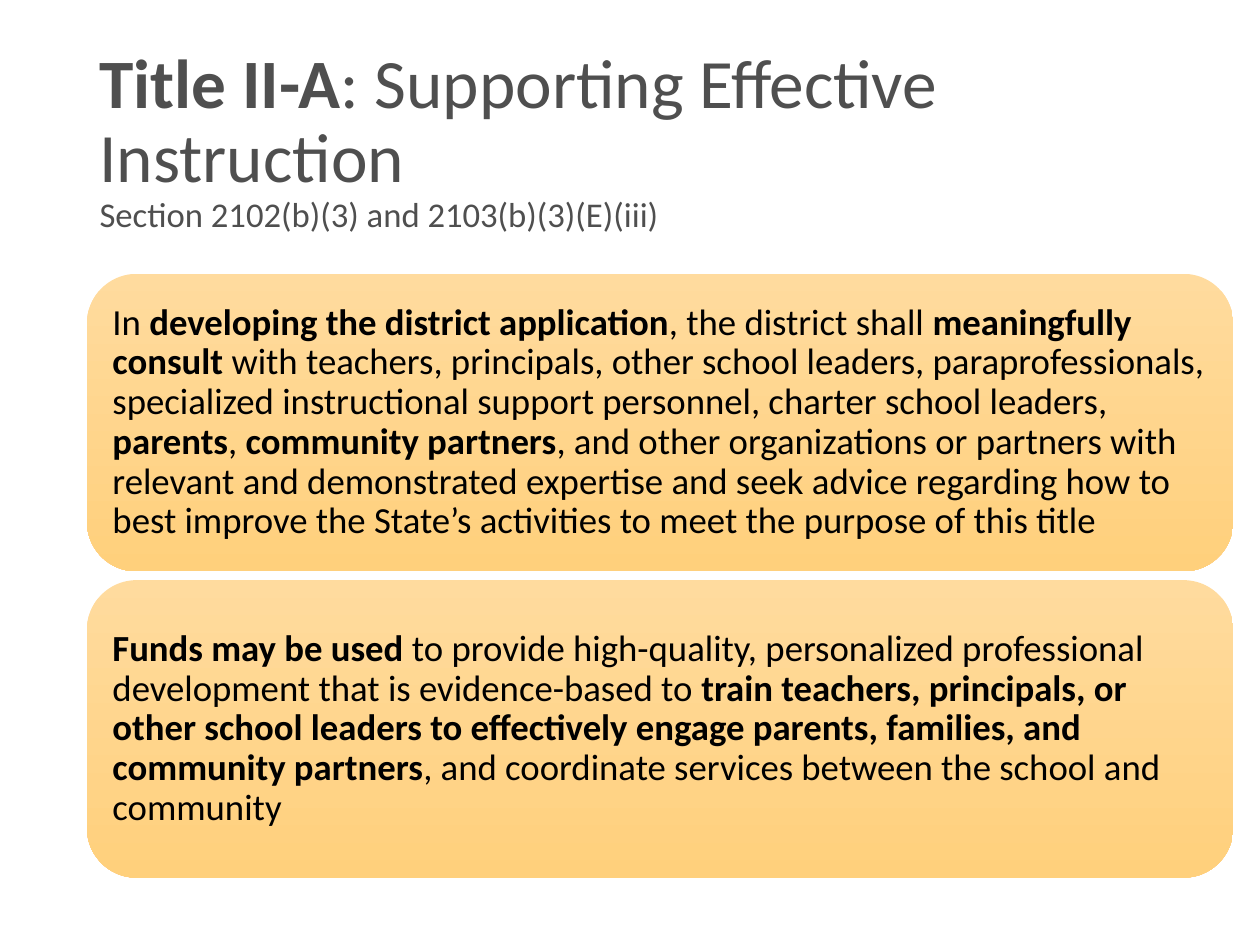
from pptx import Presentation
from pptx.dml.color import RGBColor
from pptx.enum.shapes import MSO_SHAPE as SHAPE
from pptx.enum.text import MSO_ANCHOR as ANCHOR, MSO_AUTO_SIZE as AUTO, PP_ALIGN as ALIGN
from pptx.util import Pt

FONT = "Calibri"
TITLE = [("Title II-A", True), (": Supporting Effective Instruction", False)]
SECTION = [("Section 2102(b)(3) and 2103(b)(3)(E)(iii)", False)]
CARDS = [
    [
        ("In ", False),
        ("developing the district application", True),
        (", the district shall ", False),
        ("meaningfully consult", True),
        (" with teachers, principals, other school leaders, paraprofessionals, "
         "specialized instructional support personnel, charter school leaders, ", False),
        ("parents", True),
        (", ", False),
        ("community partners", True),
        (", and other organizations or partners with relevant and demonstrated "
         "expertise and seek advice regarding how to best improve the State’s "
         "activities to meet the purpose of this title", False),
    ],
    [
        ("Funds may be used ", True),
        ("to provide high-quality, personalized professional development "
         "that is evidence-based to ", False),
        ("train teachers, principals, or other school leaders to effectively "
         "engage parents, families, and community partners", True),
        (", and coordinate services between the school and community", False),
    ],
]
GRADIENT = ["FFDB9E", "FFD07C"]
LEFT, CARD_TOP, CARD_W, CARD_H, CARD_GAP = 49.7, 156.5, 655, 170, 5


def rgb(value):
    return RGBColor.from_string(value)


def add_runs(p, runs, size, color):
    for text, bold in runs:
        r = p.add_run()
        r.text = text
        r.font.name = FONT
        r.font.size = Pt(size)
        r.font.bold = bold
        r.font.color.rgb = rgb(color)


def start_text(sp):
    tf = sp.text_frame
    tf.word_wrap = True
    tf.auto_size = AUTO.NONE
    tf.vertical_anchor = ANCHOR.MIDDLE
    p = tf.paragraphs[0]
    p.alignment = ALIGN.LEFT
    p.line_spacing = 0.9
    return tf, p


def add_title(slide):
    sp = slide.shapes.title
    sp.left, sp.top, sp.width, sp.height = Pt(LEFT), Pt(28.8), Pt(620.6), Pt(104.4)
    tf, p = start_text(sp)
    add_runs(p, TITLE, 39.6, "4F4F4F")
    p.add_line_break()
    add_runs(p, SECTION, 19.8, "4F4F4F")


def add_card(slide, index, runs):
    top = CARD_TOP + index * (CARD_H + CARD_GAP)
    sp = slide.shapes.add_shape(
        SHAPE.ROUNDED_RECTANGLE, Pt(LEFT), Pt(top), Pt(CARD_W), Pt(CARD_H))
    sp.shadow.inherit = False
    sp.line.fill.background()
    sp.fill.gradient()
    sp.fill.gradient_angle = 270
    for stop, color in zip(sp.fill.gradient_stops, GRADIENT):
        stop.color.rgb = rgb(color)
    tf, p = start_text(sp)
    tf.margin_left = tf.margin_right = tf.margin_top = tf.margin_bottom = Pt(6.3)
    add_runs(p, runs, 21, "000000")


def main():
    prs = Presentation()
    prs.slide_width, prs.slide_height = Pt(720), Pt(540)
    slide = prs.slides.add_slide(prs.slide_layouts[5])
    add_title(slide)
    for index, runs in enumerate(CARDS):
        add_card(slide, index, runs)
    prs.save("out.pptx")


if __name__ == "__main__":
    main()
